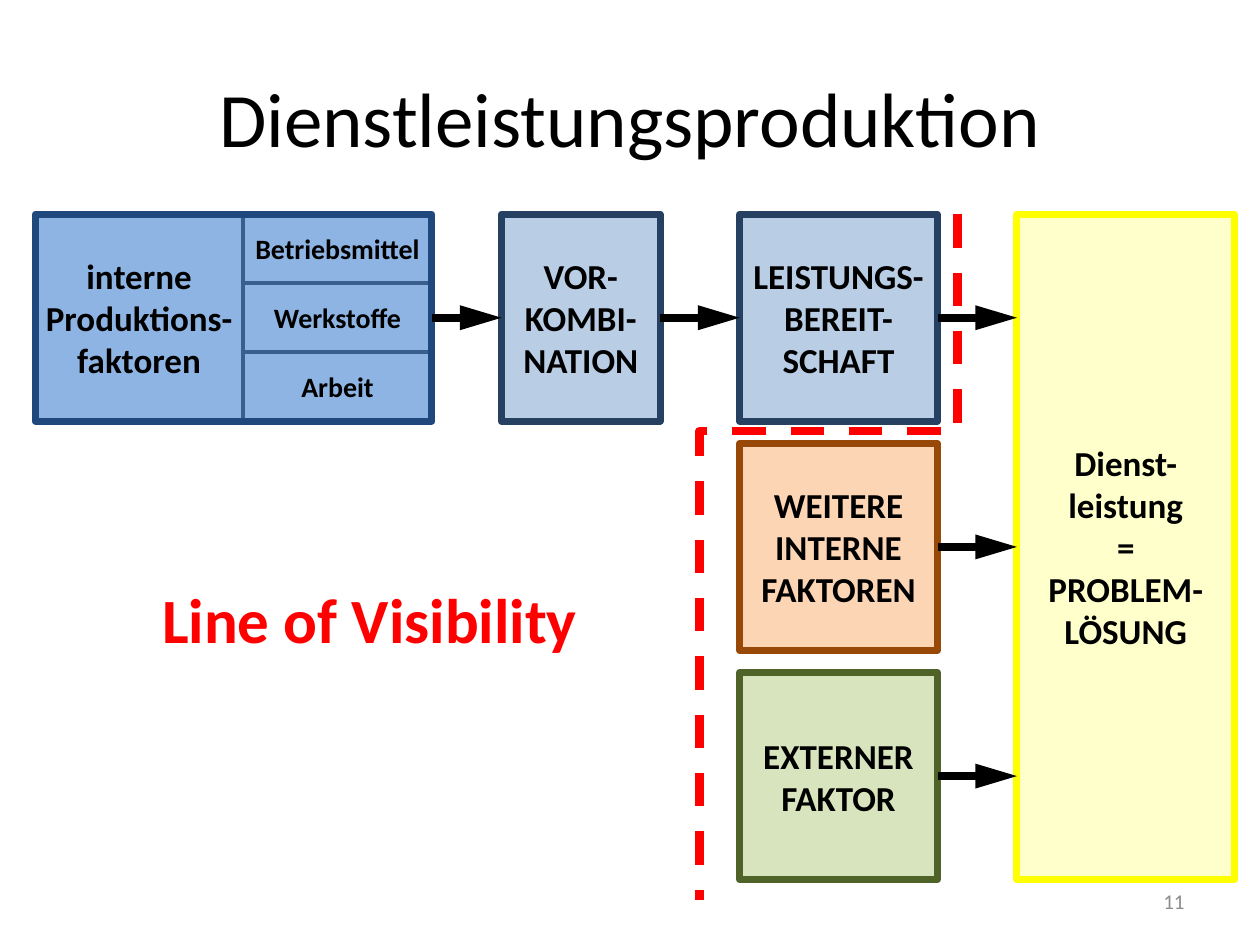
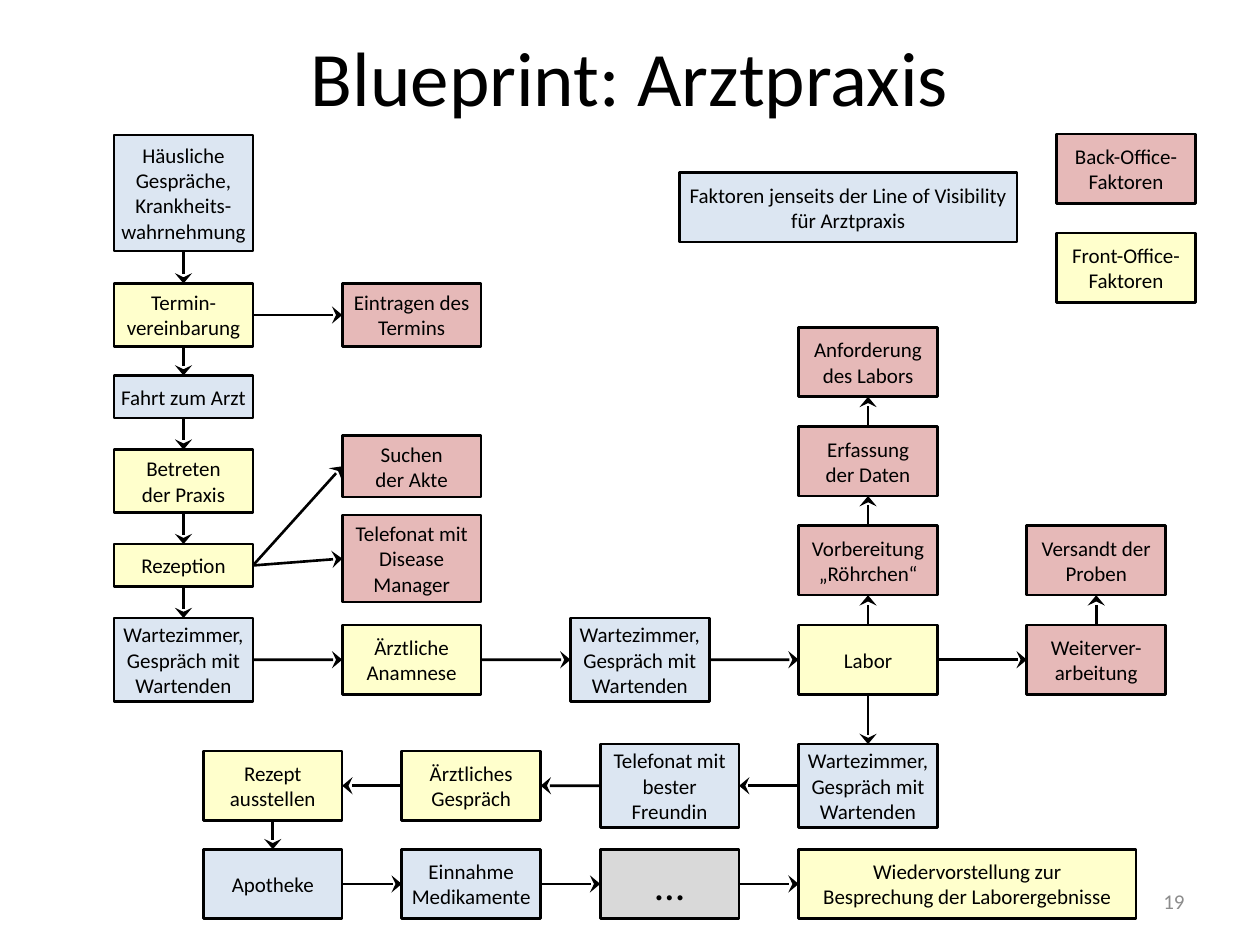
from collections import namedtuple

from lxml import etree
from pptx import Presentation
from pptx.dml.color import RGBColor
from pptx.enum.dml import MSO_LINE
from pptx.enum.shapes import MSO_CONNECTOR, MSO_SHAPE
from pptx.enum.text import MSO_ANCHOR, MSO_AUTO_SIZE, PP_ALIGN
from pptx.oxml.ns import qn
from pptx.util import Cm, Pt

RECT = MSO_SHAPE.RECTANGLE
STRAIGHT, ELBOW = MSO_CONNECTOR.STRAIGHT, MSO_CONNECTOR.ELBOW
DASH = MSO_LINE.DASH
MIDDLE, TOP = MSO_ANCHOR.MIDDLE, MSO_ANCHOR.TOP
LEFT, CENTER, RIGHT = PP_ALIGN.LEFT, PP_ALIGN.CENTER, PP_ALIGN.RIGHT
NO_FIT = MSO_AUTO_SIZE.NONE

Box = namedtuple("Box", "x y w h")
Theme = namedtuple("Theme", "font colors sizes lines")
Look = namedtuple("Look", "fill edge")

THEME = Theme(
    font="Calibri",
    colors={
        "ink": "000000", "alert": "FF0000", "page": "8C8C8C",
        "input": Look("8EB4E3", "3A5F8C"), "frame": Look(None, "1F497D"),
        "stage": Look("B9CDE5", "254061"), "more": Look("FCD5B5", "984807"),
        "guest": Look("D7E4BD", "4F6228"), "result": Look("FFFFCC", "FFFF00"),
        "far": Look("DCE6F2", "000000"), "front": Look("FFFFCC", "000000"),
        "rear": Look("E6B9B8", "000000"), "rest": Look("D9D9D9", "000000"),
    },
    sizes={"title": 44, "label": 36, "dots": 24, "block": 20, "part": 16, "step": 12},
    lines={"bold": 4.75, "block": 4, "part": 2, "step": 1.5},
)

DOWN, UP, EAST, WEST = (2, 0), (0, 2), (3, 1), (1, 3)
HEAD_BOLD = {"type": "triangle", "w": "med", "len": "lg"}
HEAD_STEP = {"type": "stealth", "w": "lg", "len": "med"}
STEP_W, STEP_H = 2.8, 1.4

MAIN = (
    ("home", 0, 1.19, 2.34, "far", "Häusliche Gespräche, Krankheits-wahrnehmung"),
    ("date", 0, 3.65, 1.27, "front", "Termin-vereinbarung"),
    ("drive", 0, 5.3, 0.86, "far", "Fahrt zum Arzt"),
    ("enter", 0, 7, 1.27, "front", "Betreten\nder Praxis"),
    ("desk", 0, 8.7, 0.86, "front", "Rezeption"),
    ("wait", 0, 10.6, 1.68, "far", "Wartezimmer, Gespräch mit Wartenden"),
    ("entry", 1, 3.65, 1.27, "rear", "Eintragen des Termins"),
    ("call", 1, 8.56, 1.75, "rear", "Telefonat mit Disease Manager"),
    ("file", 1, 6.7, 1.24, "rear", "Suchen\nder Akte"),
    ("exam", 1, 10.6, STEP_H, "front", "Ärztliche\nAnamnese"),
    ("pause", 2, 10.6, 1.68, "far", "Wartezimmer, Gespräch mit Wartenden"),
    ("lab", 3, 10.6, STEP_H, "front", "Labor"),
    ("tube", 3, 8.6, STEP_H, "rear", "Vorbereitung\n„Röhrchen“"),
    ("data", 3, 6.6, STEP_H, "rear", "Erfassung\nder Daten"),
    ("order", 3, 4.6, STEP_H, "rear", "Anforderung\ndes Labors"),
    ("send", 4, 10.6, STEP_H, "rear", "Weiterver-arbeitung"),
    ("post", 4, 8.6, STEP_H, "rear", "Versandt der Proben"),
)
LOWER = (
    ("rest", 3, 13.14, 1.68, "far", "Wartezimmer, Gespräch mit Wartenden"),
    ("friend", 2, 13.14, 1.68, "far", "Telefonat mit bester\nFreundin"),
    ("talk", 1, 13.14, STEP_H, "front", "Ärztliches\nGespräch"),
    ("script", 0, 13.14, STEP_H, "front", "Rezept ausstellen"),
    ("drug", 0, 15.12, STEP_H, "far", "Apotheke"),
    ("dose", 1, 15.12, STEP_H, "far", "Einnahme\nMedikamente"),
    ("more", 2, 15.12, STEP_H, "rest", "…"),
    ("back", 3, 15.12, STEP_H, "front",
     "Wiedervorstellung zur\nBesprechung der Laborergebnisse"),
)
CHAINS = (
    (DOWN, "home date drive enter desk wait"),
    (EAST, "date entry"),
    (EAST, "desk file"),
    (EAST, "desk call"),
    (EAST, "wait exam pause lab send"),
    (UP, "lab tube data order"),
    (UP, "send post"),
    (DOWN, "lab rest"),
    (WEST, "rest friend talk script"),
    (DOWN, "script drug"),
    (EAST, "drug dose more back"),
)


def put(item, **values):
    """Set each given value as an attribute of the item."""
    for key, value in values.items():
        setattr(item, key, value)


def lengths(box):
    """Turn a box in centimetres into slide lengths."""
    return [Cm(side) for side in box]


def write(shape, text, size, color="ink", bold=False, align=CENTER,
          anchor=MIDDLE, pad=(0.25, 0.13)):
    """Fill a shape with formatted text."""
    frame = shape.text_frame
    side, edge = (Cm(gap) for gap in pad)
    put(frame, text=text, word_wrap=True, auto_size=NO_FIT, vertical_anchor=anchor,
        margin_left=side, margin_right=side, margin_top=edge, margin_bottom=edge)
    for para in frame.paragraphs:
        para.alignment = align
        for run in para.runs:
            put(run.font, name=THEME.font, size=Pt(THEME.sizes[size]), bold=bold)
            run.font.color.rgb = RGBColor.from_string(THEME.colors[color])


def block(slide, box, look, line):
    """Draw a rectangle in one of the theme's looks."""
    shape = slide.shapes.add_shape(RECT, *lengths(box))
    shape.shadow.inherit = False
    fill, edge = THEME.colors[look]
    if fill:
        shape.fill.solid()
        shape.fill.fore_color.rgb = RGBColor.from_string(fill)
    else:
        shape.fill.background()
    shape.line.color.rgb = RGBColor.from_string(edge)
    shape.line.width = Pt(THEME.lines[line])
    return shape


def stroke(slide, kind, ends, color, line):
    """Draw a connector without a shadow."""
    wire = slide.shapes.add_connector(kind, *lengths(ends))
    etree.SubElement(wire._element.spPr, qn("a:effectLst"))
    wire.line.color.rgb = RGBColor.from_string(THEME.colors[color])
    wire.line.width = Pt(THEME.lines[line])
    return wire


def arrow(slide, line, head, ends=(0, 0, 0, 0)):
    """Draw a straight arrow with the given head."""
    wire = stroke(slide, STRAIGHT, ends, "ink", line)
    etree.SubElement(wire.line._get_or_add_ln(), qn("a:tailEnd"), head)
    return wire


def link(slide, start, stop, way, line, head):
    """Join two rectangles by an arrow in the given direction."""
    wire = arrow(slide, line, head)
    wire.begin_connect(start, way[0])
    wire.end_connect(stop, way[1])


def page(deck, title, box, number):
    """Add a slide with its title and page number."""
    slide = deck.slides.add_slide(deck.slide_layouts[5])
    head = slide.shapes.title
    put(head, **dict(zip(("left", "top", "width", "height"), lengths(box))))
    write(head, title, "title")
    foot = slide.shapes.add_textbox(*lengths(Box(18.2, 17.66, 5.93, 1.01)))
    write(foot, number, "step", "page", align=RIGHT)
    return slide


def inputs(slide, box):
    """Draw the internal factors and return their frame."""
    name_w = 4.19
    part_h = box.h / 3
    name = block(slide, box._replace(w=name_w), "input", "part")
    write(name, "interne\nProduktions-faktoren", "block", bold=True, pad=(0.1, 0.13))
    for row, text in enumerate(("Betriebsmittel", "Werkstoffe", "Arbeit")):
        spot = Box(box.x + name_w, box.y + row * part_h, box.w - name_w, part_h)
        write(block(slide, spot, "input", "part"), text, "part", bold=True, pad=(0.1, 0.13))
    return block(slide, box, "frame", "block")


def stages(slide, box):
    """Draw the column of stages from top to bottom."""
    items = (("stage", "LEISTUNGS-BEREIT-SCHAFT", 0),
             ("more", "WEITERE INTERNE FAKTOREN", 0.2),
             ("guest", "EXTERNER\nFAKTOR", 0.25))
    tall = 4.17
    step = (box.h - tall) / (len(items) - 1)
    made = []
    for row, (look, text, side) in enumerate(items):
        spot = Box(box.x, box.y + row * step, box.w, tall)
        made.append(block(slide, spot, look, "block"))
        write(made[-1], text, "block", bold=True, pad=(side, 0.13))
    return made


def border(slide, box):
    """Draw the dashed line of visibility from top right to bottom left."""
    left = box.x + (box.w - box.h) / 2
    top = box.y + (box.h - box.w) / 2
    wire = stroke(slide, ELBOW, (left, top, left + box.h, top + box.w), "alert", "bold")
    wire.line.dash_style = DASH
    shape = wire._element.spPr
    shape.find(qn("a:xfrm")).set("rot", "5400000")
    guides = shape.find(qn("a:prstGeom")).find(qn("a:avLst"))
    etree.SubElement(guides, qn("a:gd"), {"name": "adj1", "fmla": "val 31600"})


def service(deck):
    """Build the slide on the production of services."""
    slide = page(deck, "Dienstleistungsproduktion", Box(1.27, 0.76, 22.86, 3.18), "11")
    top, tall, full = 4.32, 4.17, 13.41
    frame = inputs(slide, Box(0.71, top, 8, tall))
    mix = block(slide, Box(10.11, top, 3.2, tall), "stage", "block")
    write(mix, "VOR-\nKOMBI-NATION", "block", bold=True)
    goal = Box(20.5, top, 4.39, full)
    result = block(slide, goal, "result", "block")
    write(result, "Dienst-leistung\n=\nPROBLEM-LÖSUNG", "block", bold=True)
    ready, more, guest = stages(slide, Box(14.91, top, 3.99, full))
    for start, stop in ((frame, mix), (mix, ready), (more, result)):
        link(slide, start, stop, EAST, "bold", HEAD_BOLD)
    for start, mid in ((ready, top + tall / 2), (guest, top + full - tall / 2)):
        wire = arrow(slide, "bold", HEAD_BOLD, (18.9, mid, goal.x, mid))
        wire.begin_connect(start, EAST[0])
    label = slide.shapes.add_textbox(*lengths(Box(3.02, 11.58, 9.12, 1.8)))
    write(label, "Line of Visibility", "label", "alert", True, LEFT, TOP)
    border(slide, Box(14.1, top, 5.2, 13.82))


def flow(slide, box):
    """Draw the steps of a visit and the arrows between them."""
    made = {}
    for start, pitch, items in ((0, 4.6, MAIN), (1.8, 4, LOWER)):
        for name, col, mid, tall, look, text in items:
            wide = STEP_W + (pitch if name == "back" else 0)
            spot = Box(box.x + start + col * pitch, box.y + mid - tall / 2, wide, tall)
            made[name] = block(slide, spot, look, "step")
            write(made[name], text, "dots" if name == "more" else "step", pad=(0, 0))
    for way, chain in CHAINS:
        names = chain.split()
        for start, stop in zip(names, names[1:]):
            link(slide, made[start], made[stop], way, "step", HEAD_STEP)


def legend(slide, box):
    """Explain the colours of the steps."""
    side = box.w - STEP_W
    items = ((0, 0.78, 6.8, "far", "Faktoren jenseits der Line of Visibility für Arztpraxis"),
             (side, 2, STEP_W, "front", "Front-Office-Faktoren"),
             (side, 0, STEP_W, "rear", "Back-Office-Faktoren"))
    for left, top, wide, look, text in items:
        spot = Box(box.x + left, box.y + top, wide, STEP_H)
        write(block(slide, spot, look, "step"), text, "step", pad=(0, 0))


def clinic(deck):
    """Build the slide with the blueprint of a doctor's practice."""
    slide = page(deck, "Blueprint: Arztpraxis", Box(1.27, 0.76, 22.86, 1.55), "19")
    flow(slide, Box(2.3, 2.7, 21.2, 15.82))
    legend(slide, Box(13.7, 2.7, 10.4, 3.4))


def main():
    """Build and save the deck."""
    deck = Presentation()
    put(deck, slide_width=Cm(25.4), slide_height=Cm(19.05))
    service(deck)
    clinic(deck)
    deck.save("out.pptx")


if __name__ == "__main__":
    main()
